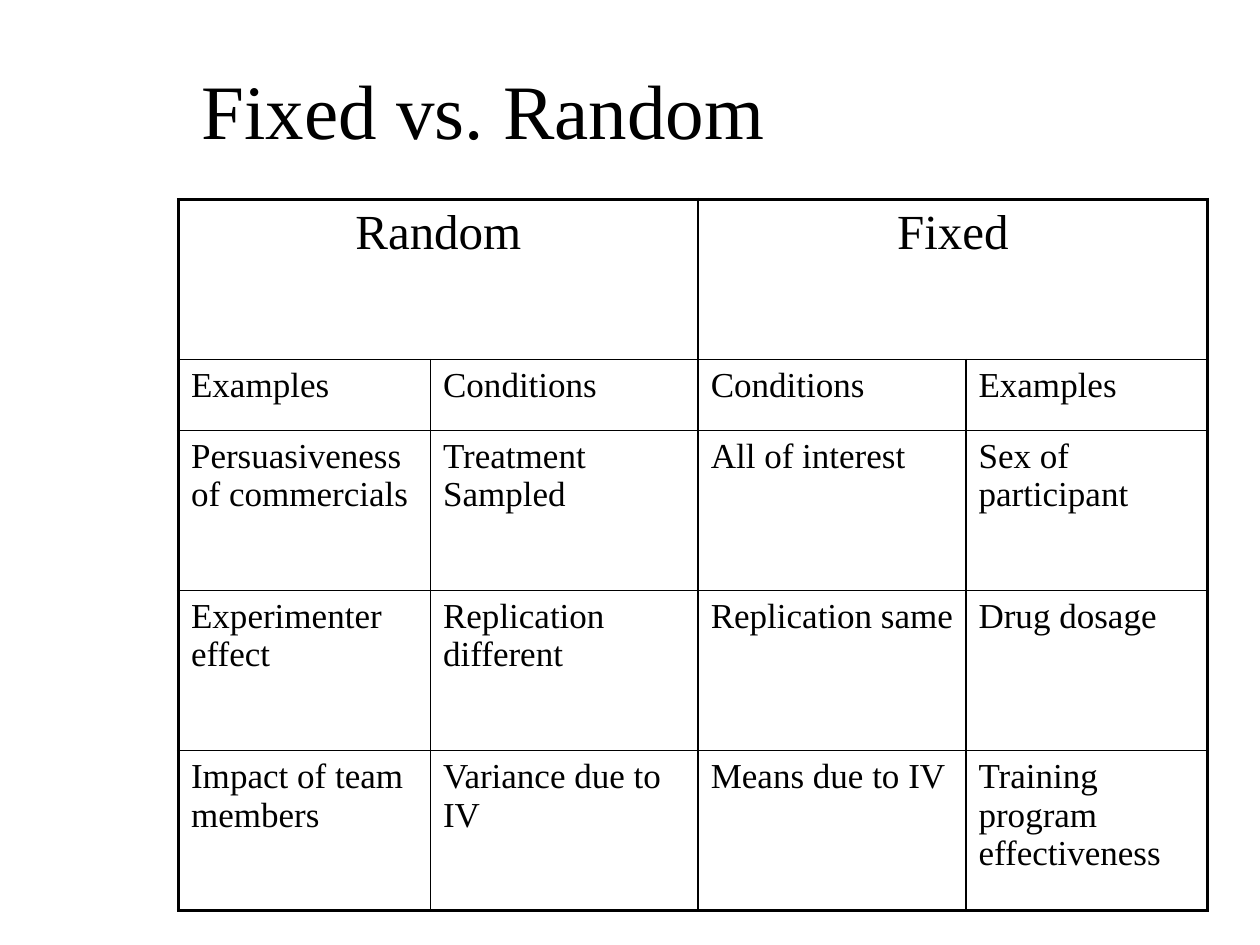
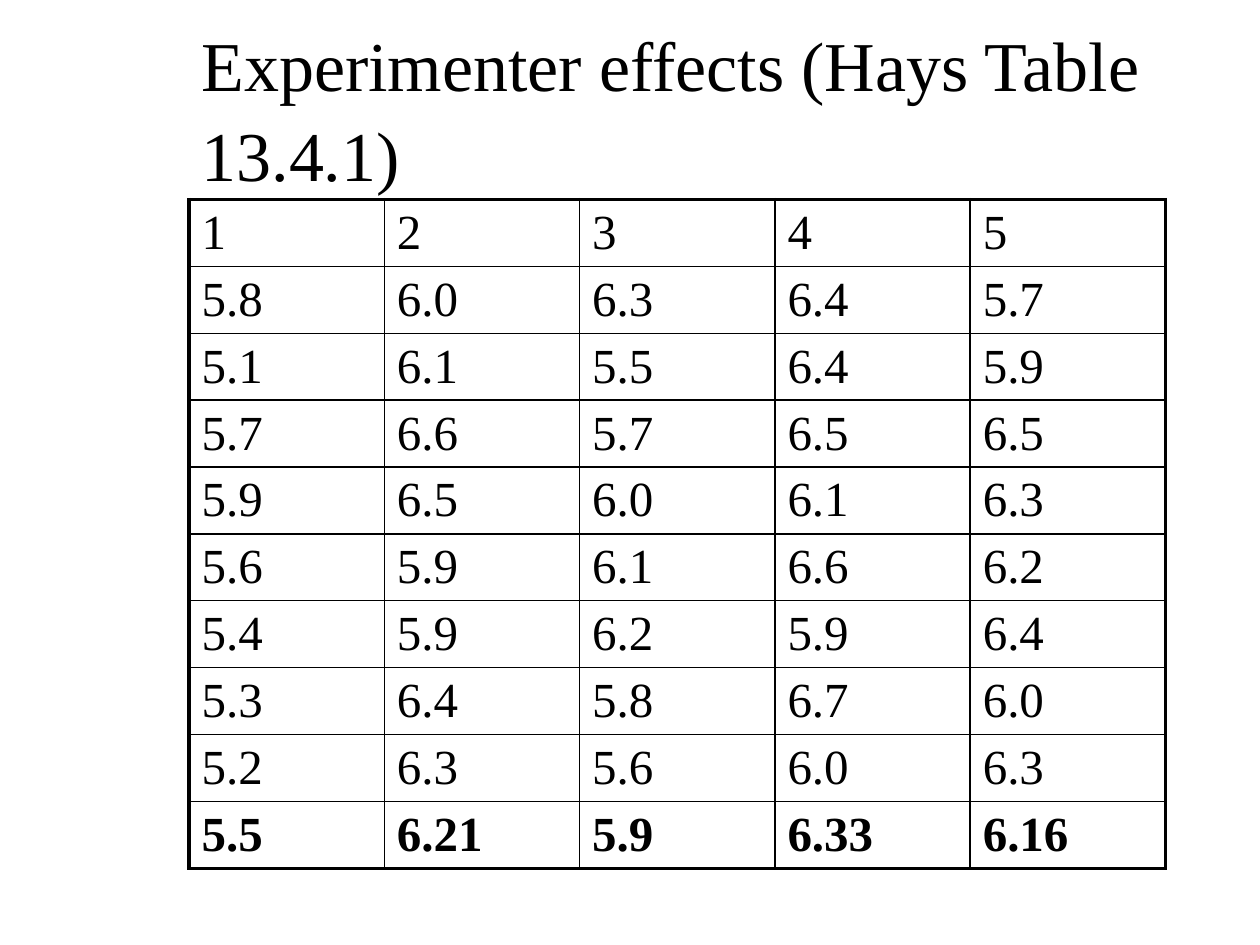
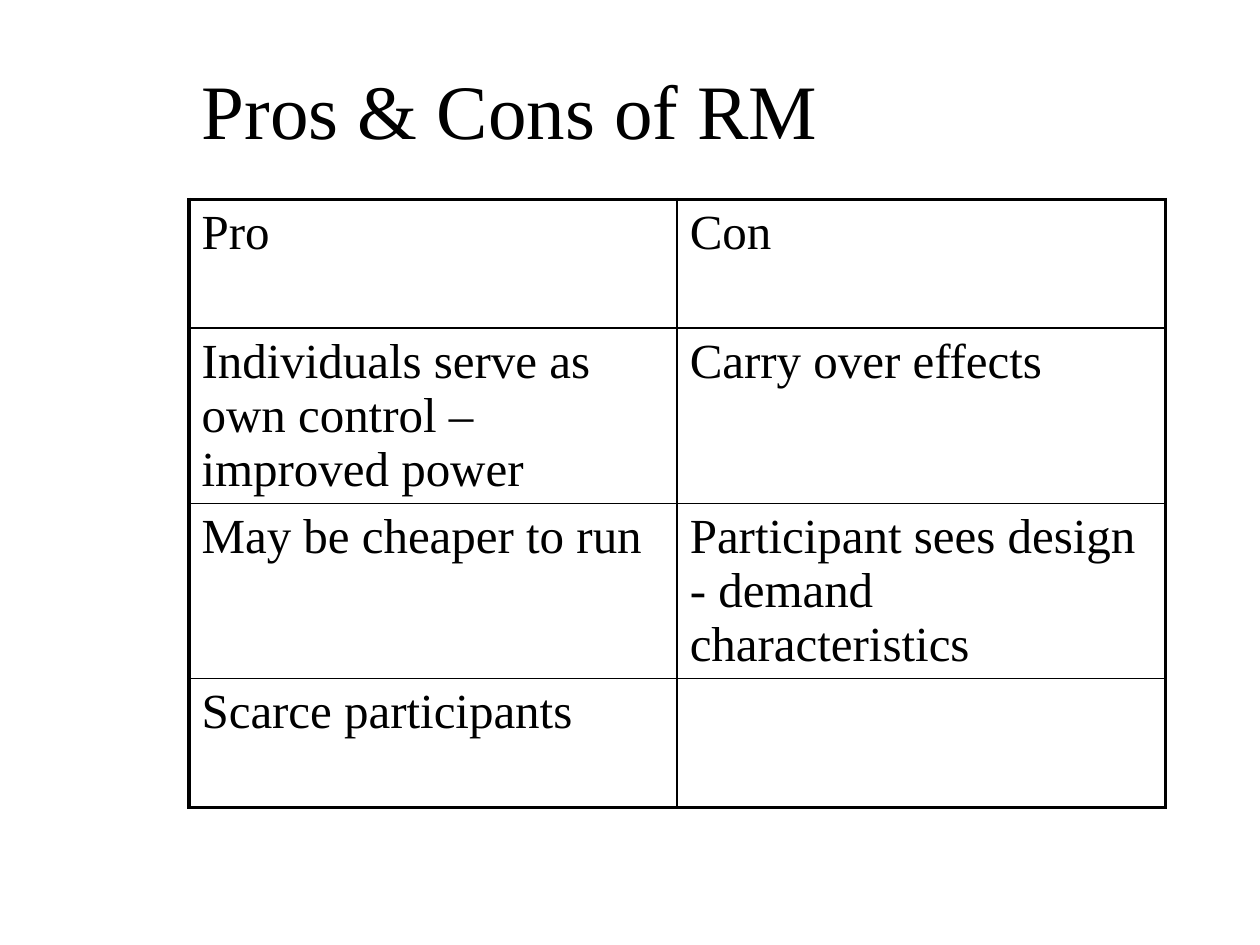
from lxml.etree import SubElement
from pptx import Presentation
from pptx.dml.color import RGBColor
from pptx.enum.text import MSO_ANCHOR, MSO_AUTO_SIZE, PP_ALIGN
from pptx.oxml.ns import qn
from pptx.util import Inches, Pt

COLORS = {"background": "FFFFFF", "text": "000000", "border": "000000"}
FONT = "Times New Roman"
TITLE_ONLY = 5

# Slide grid: 120 columns by 90 rows
SLIDE_WIDTH, SLIDE_HEIGHT = Inches(10), Inches(7.5)
COLUMN, ROW = SLIDE_WIDTH / 120, SLIDE_HEIGHT / 90
TITLE_BOX = (18, 4, 93, 12)
TABLE_TOP = 19
OUTER_LINE, INNER_LINE = 2.25, 1

FIXED_RANDOM = [
    ["Random", "", "Fixed", ""],
    ["Examples", "Conditions", "Conditions", "Examples"],
    ["Persuasiveness of commercials", "Treatment Sampled", "All of interest",
     "Sex of participant"],
    ["Experimenter effect", "Replication different", "Replication same",
     "Drug dosage"],
    ["Impact of team members", "Variance due to IV", "Means due to IV",
     "Training program effectiveness"],
]

EXPERIMENTERS = [line.split() for line in (
    "1 2 3 4 5",
    "5.8 6.0 6.3 6.4 5.7",
    "5.1 6.1 5.5 6.4 5.9",
    "5.7 6.6 5.7 6.5 6.5",
    "5.9 6.5 6.0 6.1 6.3",
    "5.6 5.9 6.1 6.6 6.2",
    "5.4 5.9 6.2 5.9 6.4",
    "5.3 6.4 5.8 6.7 6.0",
    "5.2 6.3 5.6 6.0 6.3",
    "5.5 6.21 5.9 6.33 6.16",
)]

PROS_CONS = [
    ["Pro", "Con"],
    ["Individuals serve as own control – improved power", "Carry over effects"],
    ["May be cheaper to run", "Participant sees design - demand characteristics"],
    ["Scarce participants", ""],
]


def grid_box(left, top, width, height):
    """Turn grid units into slide lengths."""
    return (round(left * COLUMN), round(top * ROW),
            round(width * COLUMN), round(height * ROW))


def set_font(paragraph, size, bold=False):
    font = paragraph.font
    font.name, font.size, font.bold = FONT, Pt(size), bold
    font.color.rgb = RGBColor.from_string(COLORS["text"])


def set_border(cell, side, points):
    line = SubElement(cell._tc.get_or_add_tcPr(), qn(f"a:ln{side}"), w=str(Pt(points)))
    fill = SubElement(line, qn("a:solidFill"))
    SubElement(fill, qn("a:srgbClr"), val=COLORS["border"])


def add_titled_slide(presentation, text, size=44):
    slide = presentation.slides.add_slide(presentation.slide_layouts[TITLE_ONLY])
    title = slide.shapes.title
    title.left, title.top, title.width, title.height = grid_box(*TITLE_BOX)
    frame = title.text_frame
    frame.text = text
    frame.word_wrap = True
    frame.auto_size = MSO_AUTO_SIZE.NONE
    frame.vertical_anchor = MSO_ANCHOR.MIDDLE
    paragraph = frame.paragraphs[0]
    paragraph.alignment = PP_ALIGN.LEFT
    paragraph.line_spacing = 1.08
    set_font(paragraph, size)
    return slide


def add_grid_table(slide, left, widths, heights, rows, merges=()):
    """Add a ruled table; each merge is a (row, first column, last column)."""
    box = grid_box(left, TABLE_TOP, sum(widths), sum(heights))
    table = slide.shapes.add_table(len(heights), len(widths), *box).table
    table.first_row = table.horz_banding = False
    for column, width in zip(table.columns, widths):
        column.width = round(width * COLUMN)
    for row, height in zip(table.rows, heights):
        row.height = round(height * ROW)
    for row, first, last in merges:
        table.cell(row, first).merge(table.cell(row, last))

    for row, texts in enumerate(rows):
        for column, text in enumerate(texts):
            cell = table.cell(row, column)
            if cell.is_spanned:
                continue
            last_column = column + cell.span_width - 1
            outer_sides = {"L": column == 0, "R": last_column == len(widths) - 1,
                           "T": row == 0, "B": row == len(heights) - 1}
            for side, is_outer in outer_sides.items():
                set_border(cell, side, OUTER_LINE if is_outer else INNER_LINE)
            cell.fill.background()
            if text:
                cell.text = text
            set_font(cell.text_frame.paragraphs[0], 28)
    return table


def build_fixed_random(presentation):
    slide = add_titled_slide(presentation, "Fixed vs. Random")
    table = add_grid_table(slide, 17, [24, 25.5, 25.5, 23],
                           [15.25, 6.75] + [15.25] * 3, FIXED_RANDOM,
                           merges=[(0, 0, 1), (0, 2, 3)])
    # Centred group headings over smaller entries
    for column in (0, 2):
        table.cell(0, column).text_frame.paragraphs[0].alignment = PP_ALIGN.CENTER
    for row in range(1, len(FIXED_RANDOM)):
        for column in range(4):
            set_font(table.cell(row, column).text_frame.paragraphs[0], 20)


def build_experimenters(presentation):
    slide = add_titled_slide(presentation, "Experimenter effects (Hays Table 13.4.1)", 40)
    table = add_grid_table(slide, 18, [18.6] * 5, [6.1] * 10, EXPERIMENTERS)
    # Bold row of means
    for column in range(5):
        set_font(table.cell(9, column).text_frame.paragraphs[0], 28, bold=True)


def build_pros_cons(presentation):
    slide = add_titled_slide(presentation, "Pros & Cons of RM")
    add_grid_table(slide, 18, [46.5] * 2, [12.25] * 4, PROS_CONS)


def main():
    presentation = Presentation()
    presentation.slide_width, presentation.slide_height = SLIDE_WIDTH, SLIDE_HEIGHT
    background = presentation.slide_master.background.fill
    background.solid()
    background.fore_color.rgb = RGBColor.from_string(COLORS["background"])
    build_fixed_random(presentation)
    build_experimenters(presentation)
    build_pros_cons(presentation)
    presentation.save("out.pptx")


if __name__ == "__main__":
    main()
